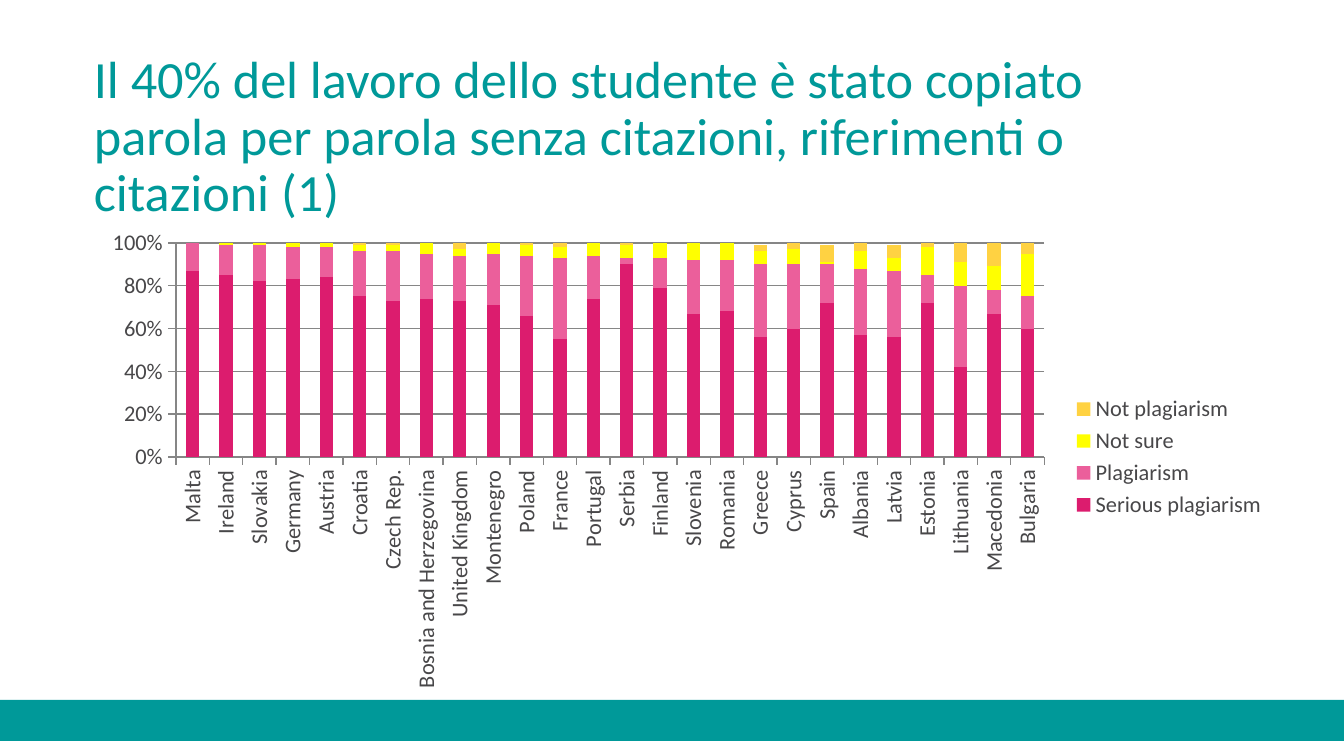
from lxml import etree
from pptx import Presentation
from pptx.chart.data import CategoryChartData
from pptx.dml.color import RGBColor
from pptx.enum.chart import XL_CHART_TYPE as ChartType, XL_LEGEND_POSITION as LegendPosition
from pptx.enum.chart import XL_TICK_MARK as TickMark
from pptx.enum.shapes import MSO_SHAPE as Shape
from pptx.enum.text import MSO_ANCHOR as Anchor
from pptx.oxml import parse_xml
from pptx.oxml.ns import nsdecls, qn
from pptx.util import Pt

FONT = "Calibri"
COLORS = {
    "teal": "009999",
    "label": "484749",
    "grid": "868686",
    "Serious plagiarism": "DC1C6E",
    "Plagiarism": "EB5F9B",
    "Not sure": "FFFF00",
    "Not plagiarism": "FFD242",
}
COUNTRIES = [
    "Malta", "Ireland", "Slovakia", "Germany", "Austria", "Croatia", "Czech Rep.",
    "Bosnia and Herzegovina", "United Kingdom", "Montenegro", "Poland", "France",
    "Portugal", "Serbia", "Finland", "Slovenia", "Romania", "Greece", "Cyprus",
    "Spain", "Albania", "Latvia", "Estonia", "Lithuania", "Macedonia", "Bulgaria",
]
PERCENTAGES = {
    "Serious plagiarism": [87, 85, 82, 83, 84, 75, 73, 74, 73, 71, 66, 55, 74,
                           90, 79, 67, 68, 56, 60, 72, 57, 56, 72, 42, 67, 60],
    "Plagiarism": [13, 14, 17, 15, 14, 21, 23, 21, 21, 24, 28, 38, 20,
                   3, 14, 25, 24, 34, 30, 18, 31, 31, 13, 38, 11, 15],
    "Not sure": [0, 1, 1, 2, 2, 3, 3, 5, 3, 6, 5, 5, 6,
                 6, 7, 8, 8, 6, 7, 1, 8, 6, 13, 11, 11, 20],
    "Not plagiarism": [0, 0, 1, 0, 1, 1, 1, 0, 3, 0, 1, 2, 1,
                       1, 1, 0, 1, 3, 3, 8, 4, 6, 2, 9, 11, 5],
}


def color(name):
    return RGBColor.from_string(COLORS[name])


def add_text(slide, text, left, top, width, height, size, fill, spacing=1.0):
    frame = slide.shapes.add_textbox(Pt(left), Pt(top), Pt(width), Pt(height)).text_frame
    frame.word_wrap = True
    frame.vertical_anchor = Anchor.MIDDLE
    paragraph = frame.paragraphs[0]
    paragraph.text = text
    paragraph.line_spacing = spacing
    paragraph.font.name = FONT
    paragraph.font.size = Pt(size)
    paragraph.font.color.rgb = color(fill)


def add_band(slide, left, top, width, height, fill):
    band = slide.shapes.add_shape(Shape.RECTANGLE, Pt(left), Pt(top), Pt(width), Pt(height))
    band.shadow.inherit = False
    band.fill.solid()
    band.fill.fore_color.rgb = color(fill)
    band.line.fill.background()


def place(part, after, x, y, w, h, inner=False):
    for old in part.findall(qn("c:layout")):
        part.remove(old)
    layout = parse_xml(f"<c:layout {nsdecls('c')}><c:manualLayout/></c:layout>")
    settings = [("layoutTarget", "inner")] if inner else []
    settings += [("xMode", "edge"), ("yMode", "edge"), ("x", x), ("y", y), ("w", w), ("h", h)]
    for tag, value in settings:
        etree.SubElement(layout[0], qn(f"c:{tag}")).set("val", str(value))
    if after is None:
        part.insert(0, layout)
    else:
        part.find(qn(after)).addnext(layout)


def style_axis(axis):
    axis.major_tick_mark = TickMark.OUTSIDE
    axis.minor_tick_mark = TickMark.NONE
    axis.format.line.color.rgb = color("grid")
    axis.format.line.width = Pt(0.75)


def add_stacked_chart(slide, left, top, width, height):
    answers = CategoryChartData(number_format="0%")
    answers.categories = COUNTRIES
    for name, shares in PERCENTAGES.items():
        answers.add_series(name, [share / 100 for share in shares])
    chart = slide.shapes.add_chart(
        ChartType.COLUMN_STACKED, Pt(left), Pt(top), Pt(width), Pt(height), answers).chart
    chart.has_title = False
    chart.font.name = FONT
    chart.font.size = Pt(12)
    chart.font.color.rgb = color("label")

    columns = chart.plots[0]
    columns.gap_width = 150
    columns.overlap = 100
    columns.vary_by_categories = False
    for series in columns.series:
        series.format.fill.solid()
        series.format.fill.fore_color.rgb = color(series.name)

    countries, shares = chart.category_axis, chart.value_axis
    style_axis(countries)
    style_axis(shares)
    countries.tick_labels.font.size = Pt(12)
    countries._element.find(qn("c:txPr")).find(qn("a:bodyPr")).set("rot", "-5400000")
    shares.minimum_scale = 0
    shares.maximum_scale = 1
    shares.major_unit = 0.2
    shares.tick_labels.number_format = "0%"
    shares.tick_labels.number_format_is_linked = False
    shares.major_gridlines.format.line.color.rgb = color("grid")
    shares.major_gridlines.format.line.width = Pt(0.75)

    chart.has_legend = True
    chart.legend.position = LegendPosition.RIGHT
    chart.legend.include_in_layout = False
    place(chart.legend._element, "c:legendPos", 0.82, 0.36, 0.17, 0.28)
    plot_area = chart._chartSpace.chart.plotArea
    place(plot_area, None, 0.07, 0.05, 0.73, 0.45, inner=True)


def main():
    deck = Presentation()
    deck.slide_width, deck.slide_height = Pt(720), Pt(405)
    slide = deck.slides.add_slide(deck.slide_layouts[6])
    add_band(slide, 0, 375, 720, 22, "teal")
    add_stacked_chart(slide, 49.7, 117.4, 637.2, 254.9)
    add_text(
        slide,
        "Il 40% del lavoro dello studente è stato copiato parola per parola "
        "senza citazioni, riferimenti o citazioni (1)",
        43.2, 31, 565.2, 86.4, size=28, fill="teal", spacing=0.9)
    deck.save("out.pptx")


if __name__ == "__main__":
    main()
